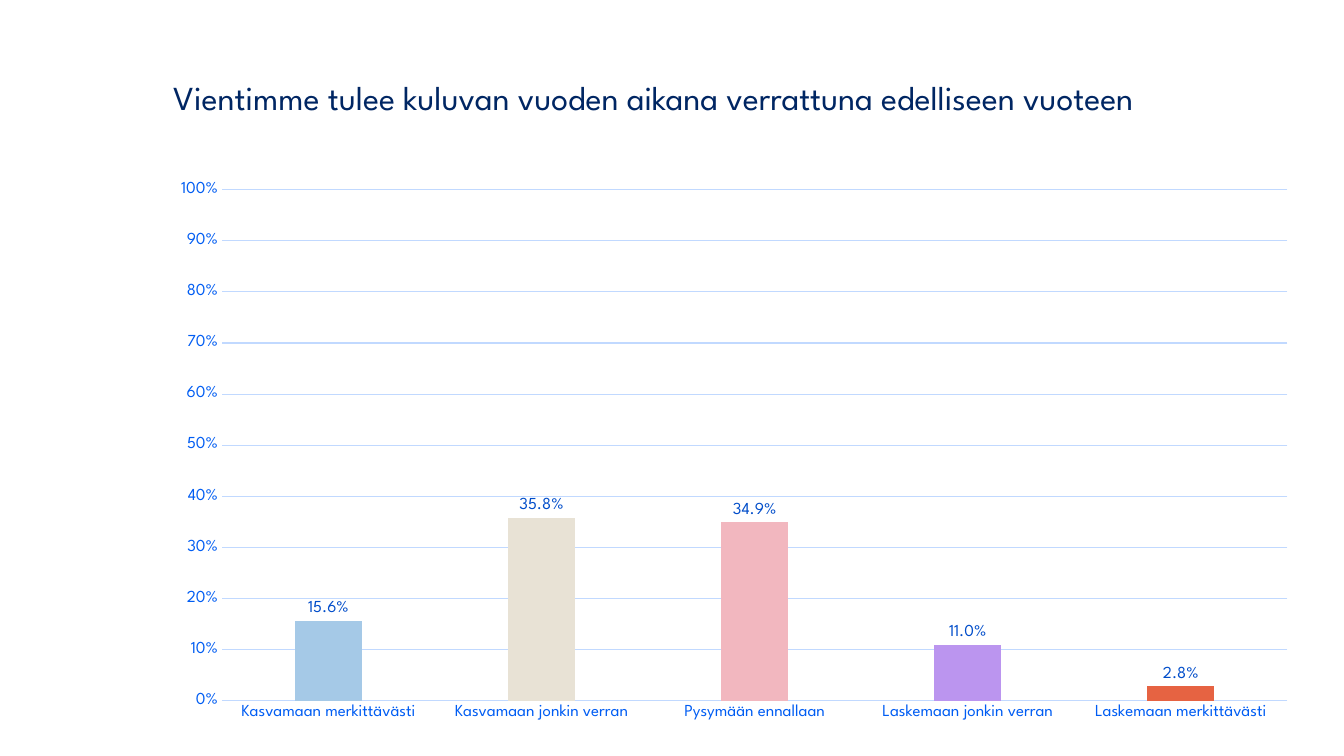
from dataclasses import dataclass

from lxml import etree
from pptx import Presentation
from pptx.chart.data import CategoryChartData
from pptx.dml.color import RGBColor
from pptx.enum import chart as ch, text
from pptx.oxml.ns import qn
from pptx.util import Inches, Pt

# Content: answer, share, bar colour
TITLE = "Vientimme tulee kuluvan vuoden aikana verrattuna edelliseen vuoteen"
ANSWERS = [
    ("Kasvamaan merkittävästi", 0.156, "A5C9E7"),
    ("Kasvamaan jonkin verran", 0.358, "E8E2D5"),
    ("Pysymään ennallaan", 0.349, "F2B7BF"),
    ("Laskemaan jonkin verran", 0.11, "BB95EF"),
    ("Laskemaan merkittävästi", 0.028, "E66342"),
]
TITLE_BOX = (1.62, 0.26, 10.94, 1.45)
CHART_BOX = (1.62, 1.78, 11.4, 5.66)
PLOT = {"x": 0.051, "y": 0.018, "w": 0.927, "h": 0.896}  # fractions of the chart


@dataclass(frozen=True)
class Theme:
    face: str = "League Spartan"
    background: str = "FFFFFF"
    title: str = "002663"
    axis: str = "005DF3"
    label: str = "004DCA"
    grid: str = "C1D9FF"
    title_size: int = 24
    chart_size: int = 10
    label_size: int = 12
    line: float = 0.75


THEME = Theme()


def rgb(code):
    return RGBColor.from_string(code)


def set_font(font, size, color):
    font.name, font.size, font.bold = THEME.face, Pt(size), False
    font.color.rgb = rgb(color)


def set_line(line):
    line.color.rgb = rgb(THEME.grid)
    line.width = Pt(THEME.line)


def add_title(slide):
    tf = slide.shapes.add_textbox(*map(Inches, TITLE_BOX)).text_frame
    tf.word_wrap = True
    tf.vertical_anchor = text.MSO_ANCHOR.MIDDLE
    p = tf.paragraphs[0]
    p.line_spacing = 0.9
    r = p.add_run()
    r.text = TITLE
    set_font(r.font, THEME.title_size, THEME.title)


def place_plot(chart):
    """Fix the inner plot area at the PLOT fractions."""
    area = chart._chartSpace.chart.plotArea
    for old in area.findall(qn("c:layout")):
        area.remove(old)
    layout = etree.Element(qn("c:layout"))
    area.insert(0, layout)
    manual = etree.SubElement(layout, qn("c:manualLayout"))
    settings = {"layoutTarget": "inner", "xMode": "edge", "yMode": "edge", **PLOT}
    for tag, value in settings.items():
        etree.SubElement(manual, qn(f"c:{tag}")).set("val", str(value))


def add_chart(slide):
    names, shares, colors = zip(*ANSWERS)
    data = CategoryChartData(number_format="0.0%")
    data.categories = names
    data.add_series("Series 1", shares)
    chart = slide.shapes.add_chart(
        ch.XL_CHART_TYPE.COLUMN_CLUSTERED, *map(Inches, CHART_BOX), data).chart
    chart.has_legend = chart.has_title = False
    set_font(chart.font, THEME.chart_size, THEME.title)
    place_plot(chart)

    # Axes
    for axis in (chart.category_axis, chart.value_axis):
        axis.major_tick_mark = axis.minor_tick_mark = ch.XL_TICK_MARK.NONE
        set_font(axis.tick_labels.font, THEME.label_size, THEME.axis)
    set_line(chart.category_axis.format.line)
    values = chart.value_axis
    values.minimum_scale, values.maximum_scale, values.major_unit = 0, 1, 0.1
    values.format.line.fill.background()
    set_line(values.major_gridlines.format.line)
    values.tick_labels.number_format = "0%"
    values.tick_labels.number_format_is_linked = False

    # Bars and their labels
    plot = chart.plots[0]
    plot.gap_width, plot.overlap, plot.vary_by_categories = 219, -27, False
    series = plot.series[0]
    series.invert_if_negative = False
    for i, color in enumerate(colors):
        fill = series.points[i].format.fill
        fill.solid()
        fill.fore_color.rgb = rgb(color)
    labels = series.data_labels
    labels.show_value = True
    labels.number_format, labels.number_format_is_linked = "0.0%", False
    labels.position = ch.XL_LABEL_POSITION.OUTSIDE_END
    set_font(labels.font, THEME.label_size, THEME.label)


def main():
    prs = Presentation()
    prs.slide_width, prs.slide_height = Inches(13.33), Inches(7.5)
    slide = prs.slides.add_slide(prs.slide_layouts[6])
    slide.background.fill.solid()
    slide.background.fill.fore_color.rgb = rgb(THEME.background)
    add_title(slide)
    add_chart(slide)
    prs.save("out.pptx")


if __name__ == "__main__":
    main()
